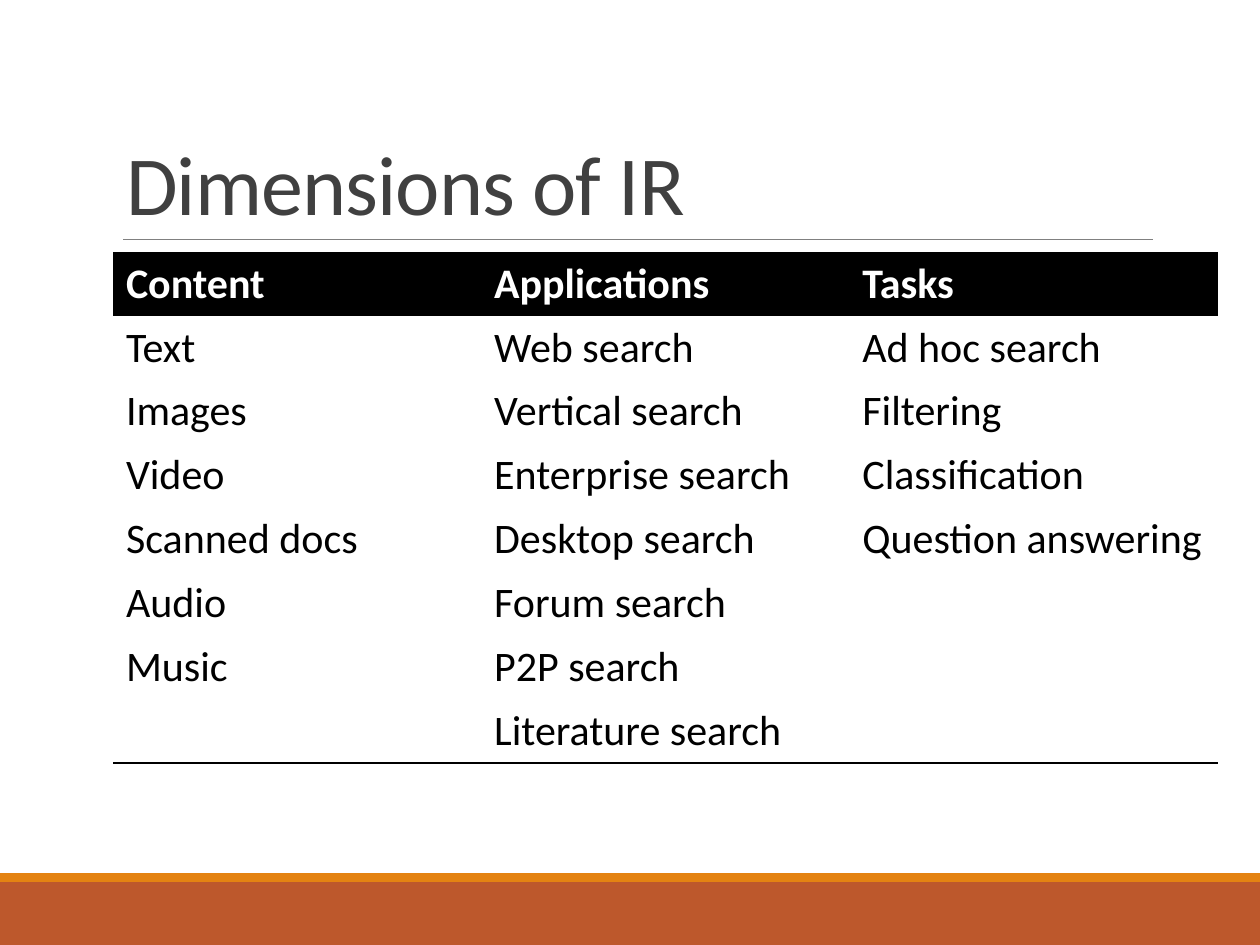
from itertools import zip_longest

from lxml.etree import SubElement
from pptx import Presentation
from pptx.dml.color import RGBColor
from pptx.enum.shapes import MSO_CONNECTOR, MSO_SHAPE
from pptx.enum.text import MSO_ANCHOR, PP_ALIGN
from pptx.oxml import parse_xml
from pptx.oxml.ns import nsdecls, qn
from pptx.util import Pt

CONTENT = ["Text", "Images", "Video", "Scanned docs", "Audio", "Music"]
APPS = ["Web search", "Vertical search", "Enterprise search", "Desktop search",
        "Forum search", "P2P search", "Literature search"]
TASKS = ["Ad hoc search", "Filtering", "Classification", "Question answering"]
PLAIN = "{2D5ABB26-0587-4C30-8999-92F81FD0307C}"  # table style: no style, no grid


def color(code):
    return RGBColor.from_string(code)


class Deck:
    font = "Calibri"
    ink = "000000"
    paper = "FFFFFF"

    def __init__(self, wide, high):
        self.prs = Presentation()
        self.prs.slide_width, self.prs.slide_height = Pt(wide), Pt(high)
        self.slide = self.prs.slides.add_slide(self.prs.slide_layouts[5])

    def add_text(self, para, text, size, code, bold=False):
        run = para.add_run()
        run.text = text
        run.font.name = self.font
        run.font.size = Pt(size)
        run.font.bold = bold
        run.font.color.rgb = color(code)
        return run

    def title(self, text, left, top, wide, high):
        box = self.slide.shapes.title
        box.left, box.top, box.width, box.height = map(Pt, (left, top, wide, high))
        box.text_frame.vertical_anchor = MSO_ANCHOR.BOTTOM
        para = box.text_frame.paragraphs[0]
        para.alignment = PP_ALIGN.LEFT
        para.line_spacing = 0.85
        run = self.add_text(para, text, 48, "404040")
        run._r.get_or_add_rPr().set("spc", "-50")

    def band(self, top, high, code):
        """Draw a filled bar across the whole slide."""
        bar = self.slide.shapes.add_shape(
            MSO_SHAPE.RECTANGLE, 0, Pt(top), self.prs.slide_width, Pt(high))
        bar.shadow.inherit = False
        bar.fill.solid()
        bar.fill.fore_color.rgb = color(code)
        bar.line.fill.background()

    def rule(self, left, right, top, code):
        line = self.slide.shapes.add_connector(
            MSO_CONNECTOR.STRAIGHT, Pt(left), Pt(top), Pt(right), Pt(top))
        line.line.color.rgb = color(code)
        line.line.width = Pt(0.5)
        SubElement(line._element.spPr, qn("a:effectLst"))

    def table(self, rows, left, top, wide, step):
        frame = self.slide.shapes.add_table(
            len(rows), len(rows[0]), Pt(left), Pt(top), Pt(wide), Pt(step * len(rows)))
        grid = frame.table
        grid.horz_banding = grid.first_row = False
        grid._tbl.tblPr.find(qn("a:tableStyleId")).text = PLAIN
        for r, row in enumerate(rows):
            for c, text in enumerate(row):
                self.cell(grid.cell(r, c), text, r == 0)
        for c in range(len(rows[0])):
            self.edge(grid.cell(len(rows) - 1, c))

    def cell(self, cell, text, head):
        if head:
            cell.fill.solid()
            cell.fill.fore_color.rgb = color(self.ink)
        else:
            cell.fill.background()
        if text:
            self.add_text(cell.text_frame.paragraphs[0], text, 24,
                          self.paper if head else self.ink, head)

    def edge(self, cell):
        """Give a cell a thin bottom border."""
        line = parse_xml(
            f'<a:lnB {nsdecls("a")} w="{Pt(1)}"><a:solidFill>'
            f'<a:srgbClr val="{self.ink}"/></a:solidFill></a:lnB>')
        cell._tc.get_or_add_tcPr().insert(0, line)


def main():
    deck = Deck(720, 540)
    deck.band(504, 36, "BD582C")
    deck.band(499, 5, "E48312")
    deck.rule(70.5, 659, 136.8, "808080")
    deck.title("Dimensions of IR", 64.8, 22.5, 594, 114.3)
    rows = [("Content", "Applications", "Tasks"),
            *zip_longest(CONTENT, APPS, TASKS, fillvalue="")]
    deck.table(rows, 64.8, 144, 631.2, 36.5)
    deck.prs.save("out.pptx")


if __name__ == "__main__":
    main()
